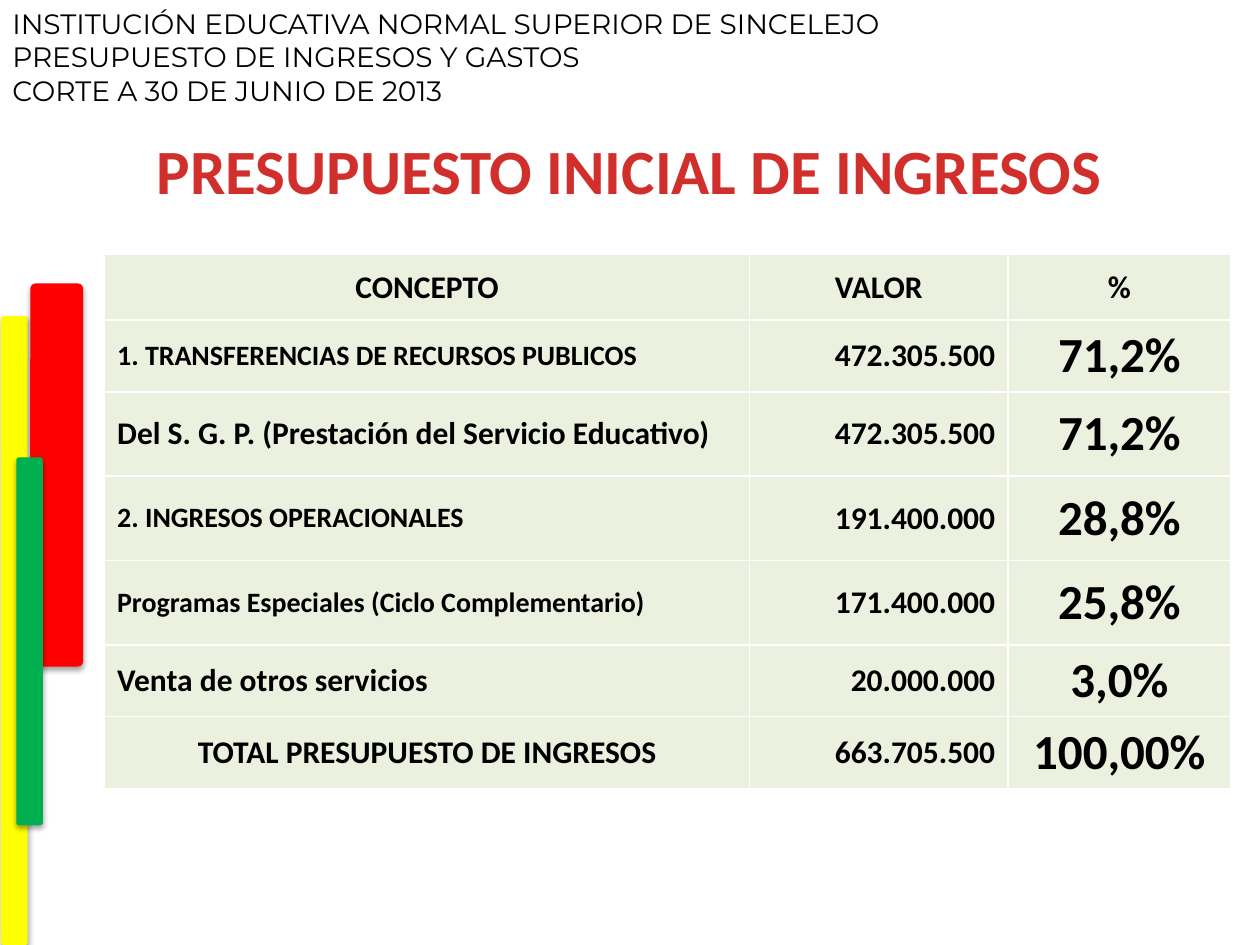
from typing import NamedTuple

from lxml import etree
from pptx import Presentation
from pptx.dml.color import RGBColor
from pptx.enum import shapes, text
from pptx.oxml import ns
from pptx.util import Inches, Pt

BLACK = RGBColor(0x00, 0x00, 0x00)
YELLOW = RGBColor(0xFF, 0xFF, 0x00)
RED = RGBColor(0xFF, 0x00, 0x00)
GREEN = RGBColor(0x00, 0xB0, 0x50)
TITLE_RED = RGBColor(0xD0, 0x2F, 0x2C)
PALE_GREEN = RGBColor(0xEB, 0xF1, 0xDE)

LEFT, CENTER, RIGHT = text.PP_ALIGN.LEFT, text.PP_ALIGN.CENTER, text.PP_ALIGN.RIGHT


class Bar(NamedTuple):
    left: float
    top: float
    width: float
    height: float
    color: RGBColor


class BudgetRow(NamedTuple):
    concept: str
    value: str
    share: str
    height: float
    concept_size: int = 18
    concept_align: text.PP_ALIGN = LEFT
    value_align: text.PP_ALIGN = RIGHT
    share_size: int = 28


BARS = [
    Bar(0.01, 2.51, 0.21, 4.99, YELLOW),
    Bar(0.24, 2.25, 0.42, 3.04, RED),
    Bar(0.13, 3.63, 0.21, 2.92, GREEN),
]
HEADING = [
    "INSTITUCIÓN EDUCATIVA NORMAL SUPERIOR DE SINCELEJO",
    "PRESUPUESTO DE INGRESOS Y GASTOS",
    "CORTE A 30 DE JUNIO DE 2013",
]
COLUMN_WIDTHS = [5.12, 2.05, 1.77]
ROWS = [
    BudgetRow("CONCEPTO", "VALOR", "%", 0.52, 18, CENTER, CENTER, 18),
    BudgetRow("1. TRANSFERENCIAS DE RECURSOS PUBLICOS", "472.305.500", "71,2%", 0.57, 16),
    BudgetRow("Del S. G. P. (Prestación del Servicio Educativo)", "472.305.500", "71,2%", 0.67),
    BudgetRow("2. INGRESOS OPERACIONALES", "191.400.000", "28,8%", 0.67, 16),
    BudgetRow("Programas Especiales (Ciclo Complementario)", "171.400.000", "25,8%", 0.67, 16),
    BudgetRow("Venta de otros servicios", "20.000.000", "3,0%", 0.57),
    BudgetRow("TOTAL PRESUPUESTO DE INGRESOS", "663.705.500", "100,00%", 0.57, 18, CENTER),
]


def format_paragraph(p, font: str, size: int, color: RGBColor, bold: bool, align) -> None:
    p.alignment = align
    p.font.name = font
    p.font.size = Pt(size)
    p.font.bold = bold
    p.font.color.rgb = color


def add_soft_shadow(sp) -> None:
    """Give the shape a faint black shadow falling straight down."""
    sp.shadow.inherit = False
    effects = sp._element.spPr.find(ns.qn("a:effectLst"))
    shadow = etree.SubElement(effects, ns.qn("a:outerShdw"), blurRad=str(Pt(3.1)),
                              dist=str(Pt(1.8)), dir="5400000", rotWithShape="0")
    color = etree.SubElement(shadow, ns.qn("a:srgbClr"), val="000000")
    etree.SubElement(color, ns.qn("a:alpha"), val="35000")


def add_bar(slide, bar: Bar) -> None:
    sp = slide.shapes.add_shape(shapes.MSO_SHAPE.ROUNDED_RECTANGLE, Inches(bar.left),
                                Inches(bar.top), Inches(bar.width), Inches(bar.height))
    sp.adjustments[0] = 0.1
    sp.fill.solid()
    sp.fill.fore_color.rgb = bar.color
    sp.line.fill.background()
    add_soft_shadow(sp)


def add_heading(slide) -> None:
    tf = slide.shapes.add_textbox(0, 0, Inches(10), Inches(0.94)).text_frame
    tf.word_wrap = True
    tf.text = "\n".join(HEADING)
    for p in tf.paragraphs:
        format_paragraph(p, "Montserrat", 16, BLACK, False, LEFT)


def set_title(slide) -> None:
    title = slide.shapes.title
    title.left, title.top = Inches(1.05), Inches(0.99)
    title.width, title.height = Inches(7.89), Inches(0.71)
    tf = title.text_frame
    tf.text = "PRESUPUESTO INICIAL DE INGRESOS"
    tf.word_wrap = False
    tf.auto_size = text.MSO_AUTO_SIZE.SHAPE_TO_FIT_TEXT
    tf.vertical_anchor = text.MSO_ANCHOR.TOP
    format_paragraph(tf.paragraphs[0], "Calibri", 36, TITLE_RED, True, CENTER)


def fill_cell(cell, content: str, size: int, align) -> None:
    cell.text = content
    cell.vertical_anchor = text.MSO_ANCHOR.MIDDLE
    cell.fill.solid()
    cell.fill.fore_color.rgb = PALE_GREEN
    format_paragraph(cell.text_frame.paragraphs[0], "Calibri", size, BLACK, True, align)


def add_budget_table(slide) -> None:
    table = slide.shapes.add_table(
        len(ROWS), len(COLUMN_WIDTHS), Inches(0.83), Inches(2.02),
        Inches(sum(COLUMN_WIDTHS)), Inches(sum(row.height for row in ROWS))).table
    for column, width in zip(table.columns, COLUMN_WIDTHS):
        column.width = Inches(width)
    for i, row in enumerate(ROWS):
        table.rows[i].height = Inches(row.height)
        fill_cell(table.cell(i, 0), row.concept, row.concept_size, row.concept_align)
        fill_cell(table.cell(i, 1), row.value, 18, row.value_align)
        fill_cell(table.cell(i, 2), row.share, row.share_size, CENTER)


def main() -> None:
    prs = Presentation()
    prs.slide_width, prs.slide_height = Inches(10), Inches(7.5)
    slide = prs.slides.add_slide(prs.slide_layouts[5])
    for bar in BARS:
        add_bar(slide, bar)
    add_heading(slide)
    add_budget_table(slide)
    set_title(slide)
    prs.save("out.pptx")


if __name__ == "__main__":
    main()
